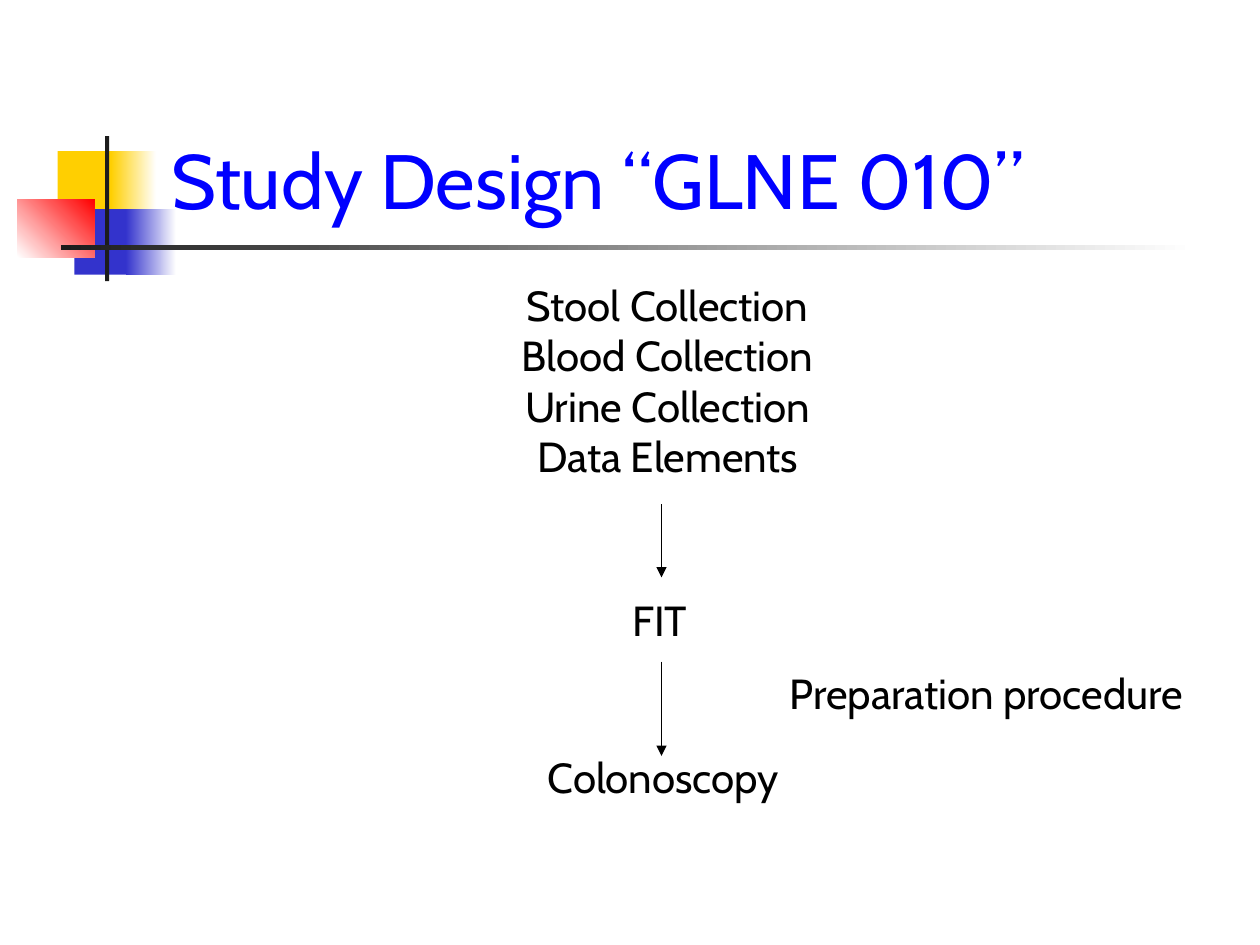
import pptx
import pptx.dml.color
import pptx.enum.shapes
import pptx.enum.text
import pptx.oxml
import pptx.oxml.ns
import pptx.util

Pt = pptx.util.Pt
Align = pptx.enum.text.PP_ALIGN
Anchor = pptx.enum.text.MSO_ANCHOR

COLORS = {
    "yellow": "FFCF01",
    "indigo": "3333CC",
    "red": "FF0000",
    "charcoal": "1C1C1C",
    "white": "FFFFFF",
    "title": "0000FF",
    "text": "000000",
}


def rgb(name):
    return pptx.dml.color.RGBColor.from_string(COLORS[name])


def write_text(frame, text, size=24, color="text", font="Cabin", align=Align.LEFT):
    """Write one paragraph per line of text."""
    for index, line in enumerate(text.split("\n")):
        paragraph = frame.paragraphs[0] if index == 0 else frame.add_paragraph()
        paragraph.alignment = align
        run = paragraph.add_run()
        run.text = line
        run.font.size = Pt(size)
        run.font.name = font
        run.font.color.rgb = rgb(color)


class SlideBuilder:
    def __init__(self, slide, line_width=0.75):
        self.slide = slide
        self.line_width = line_width

    def rectangle(self, left, top, width, height, color, end_color=None, angle=0):
        shape = self.slide.shapes.add_shape(
            pptx.enum.shapes.MSO_SHAPE.RECTANGLE,
            Pt(left), Pt(top), Pt(width), Pt(height))
        shape.shadow.inherit = False
        shape.line.fill.background()
        if end_color is None:
            shape.fill.solid()
            shape.fill.fore_color.rgb = rgb(color)
        else:
            shape.fill.gradient()
            shape.fill.gradient_angle = angle
            for stop, name in zip(shape.fill.gradient_stops, (color, end_color)):
                stop.color.rgb = rgb(name)

    def text_box(self, left, top, width, height, text, wrap=False,
                 anchor=Anchor.TOP, **text_format):
        shape = self.slide.shapes.add_textbox(Pt(left), Pt(top), Pt(width), Pt(height))
        frame = shape.text_frame
        frame.word_wrap = wrap
        frame.vertical_anchor = anchor
        write_text(frame, text, **text_format)

    def down_arrow(self, x, top, bottom):
        connector = self.slide.shapes.add_connector(
            pptx.enum.shapes.MSO_CONNECTOR.STRAIGHT, Pt(x), Pt(top), Pt(x), Pt(bottom))
        connector.line.width = Pt(self.line_width)
        connector.line.color.rgb = rgb("text")
        tail = pptx.oxml.parse_xml(
            f'<a:tailEnd {pptx.oxml.ns.nsdecls("a")} type="triangle"/>')
        connector.line._get_or_add_ln().append(tail)
        connector._element.spPr.append(pptx.oxml.parse_xml(
            f'<a:effectLst {pptx.oxml.ns.nsdecls("a")}/>'))


def main():
    presentation = pptx.Presentation()
    presentation.slide_width = Pt(720)
    presentation.slide_height = Pt(540)
    builder = SlideBuilder(presentation.slides.add_slide(presentation.slide_layouts[6]))

    # Corner ornament: coloured blocks, then the crossing bars
    builder.rectangle(33, 86.4, 34.6, 37.4, "yellow")
    builder.rectangle(63.4, 86.4, 25.9, 37.4, "yellow", "white")
    builder.rectangle(42.5, 119.5, 33.1, 37.4, "indigo")
    builder.rectangle(72, 119.5, 28.8, 37.4, "indigo", "white")
    builder.rectangle(10, 113.8, 44, 33.1, "white", "red", angle=45)
    builder.rectangle(60, 77.8, 2.4, 82.8, "charcoal")
    builder.rectangle(34.8, 140.2, 648, 2.4, "charcoal", "white")

    # Title
    builder.text_box(90.7, 16.6, 613.4, 115.2, "Study Design “GLNE 010”",
                     wrap=True, anchor=Anchor.BOTTOM, size=44, color="title")

    # Study steps
    builder.text_box(
        210.2, 156.2, 342.7, 123.8,
        "Stool Collection\nBlood Collection\nUrine Collection\nData Elements",
        wrap=True, align=Align.CENTER)
    builder.text_box(354.2, 336.2, 49.7, 36, "FIT")
    builder.text_box(306, 426.2, 146.9, 36, "Colonoscopy")
    builder.text_box(444.2, 378, 251.3, 36.7, "Preparation procedure")

    # Arrows between the steps
    for top, bottom in ((288, 330), (378, 432)):
        builder.down_arrow(378, top, bottom)

    presentation.save("out.pptx")


if __name__ == "__main__":
    main()
